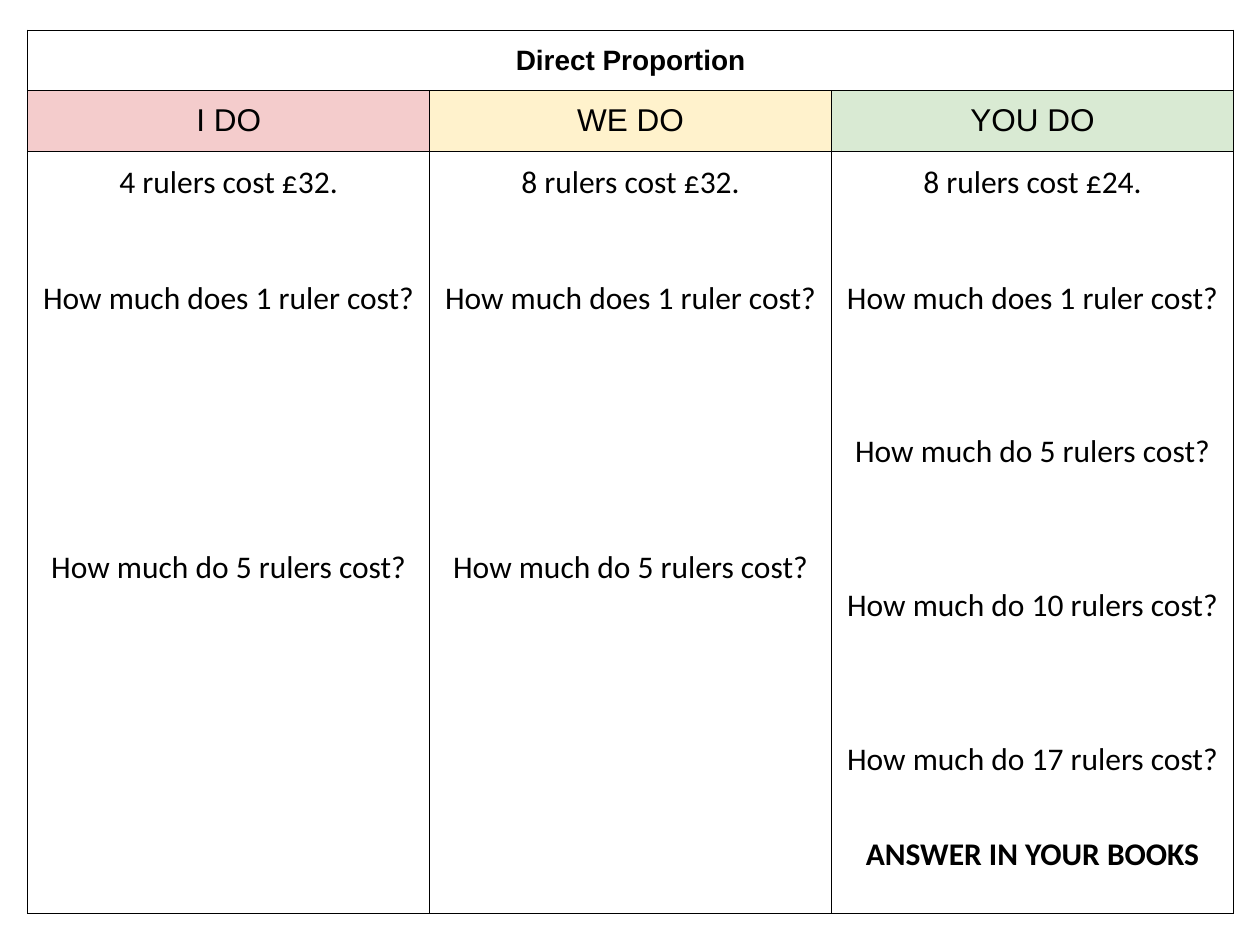
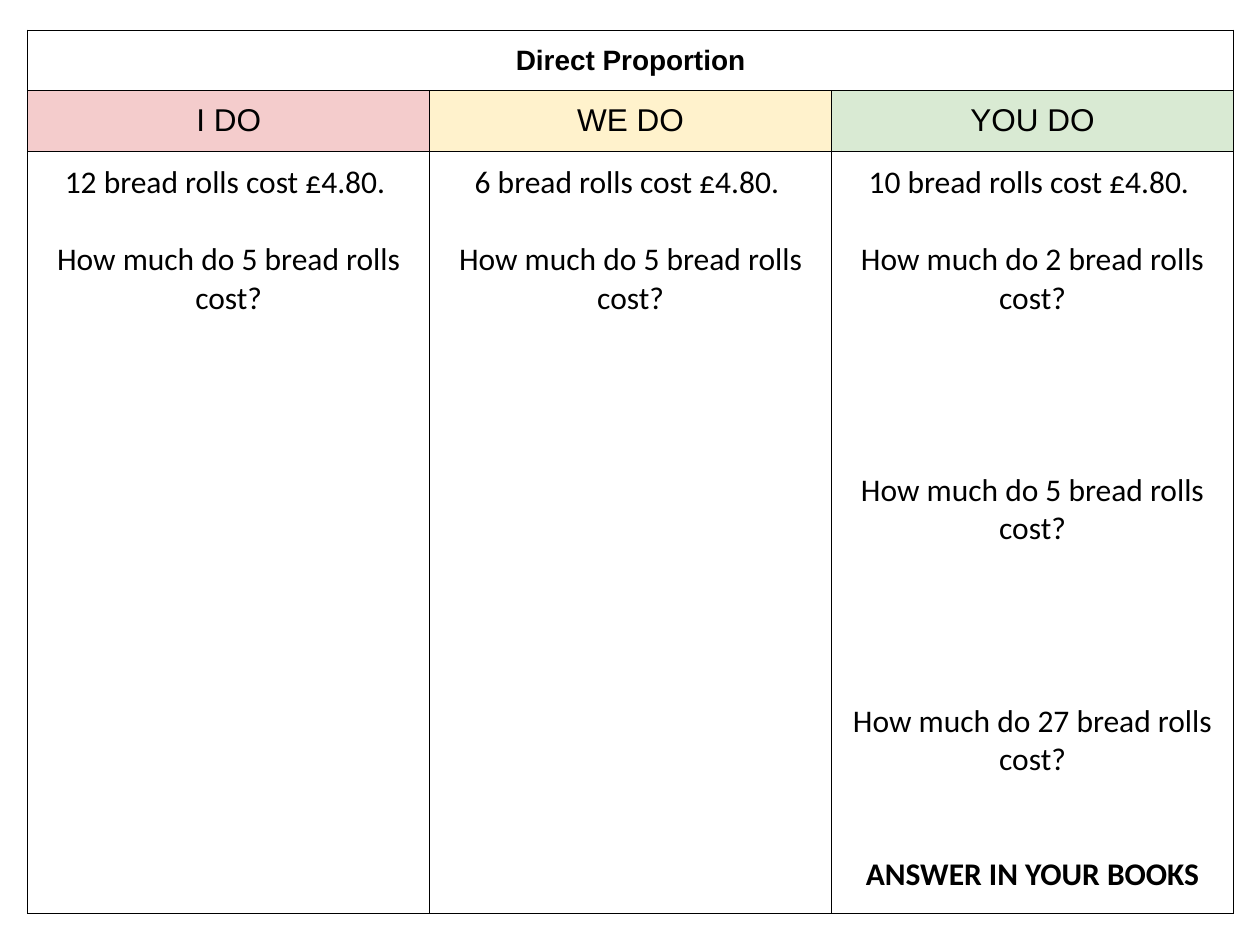
from lxml.etree import SubElement
from pptx import Presentation
from pptx.dml.color import RGBColor
from pptx.enum.text import MSO_ANCHOR as Anchor, PP_ALIGN as Align
from pptx.oxml.ns import qn
from pptx.util import Inches, Pt

BLACK = RGBColor(0x00, 0x00, 0x00)
PINK = RGBColor(0xF4, 0xCC, 0xCC)
CREAM = RGBColor(0xFF, 0xF2, 0xCC)
GREEN = RGBColor(0xD9, 0xEA, 0xD3)

LEFT, TOP, WIDTH = 0.22, 0.24, 9.57
HEADER_HEIGHT, BODY_HEIGHT = 0.48, 6.05
BODY_LINE = 21.97
TITLE = "Direct Proportion"
HEADINGS = [("I DO", PINK), ("WE DO", CREAM), ("YOU DO", GREEN)]
REMINDER = "ANSWER IN YOUR BOOKS"


class Worksheet:
    """Draws worksheet tables in a shared style on the current slide."""

    def __init__(self, deck):
        self.deck = deck
        self.page = None

    def add_page(self):
        self.page = self.deck.slides.add_slide(self.deck.slide_layouts[6])

    def add_table(self, left, top, width, heights):
        frame = self.page.shapes.add_table(len(heights), 1, Inches(left), Inches(top),
                                           Inches(width), Inches(sum(heights)))
        table = frame.table
        table.first_row = table.horz_banding = False
        for row, height in zip(table.rows, heights):
            row.height = Inches(height)
        return table

    def style_cell(self, cell, border, fill=None, anchor=Anchor.MIDDLE):
        properties = cell._tc.get_or_add_tcPr()
        for side in ("a:lnL", "a:lnR", "a:lnT", "a:lnB"):
            line = SubElement(properties, qn(side), w=str(Pt(border)))
            SubElement(SubElement(line, qn("a:solidFill")), qn("a:srgbClr"), val=str(BLACK))
        if fill is None:
            cell.fill.background()
        else:
            cell.fill.solid()
            cell.fill.fore_color.rgb = fill
        cell.vertical_anchor = anchor
        cell.margin_left = cell.margin_right = Inches(0.1)
        cell.margin_top = cell.margin_bottom = Inches(0.1)

    def set_text(self, para, text, font="Arial", size=18, bold=False):
        para.text = text
        para.alignment = Align.CENTER
        for span in para.runs:
            span.font.name = font
            span.font.size = Pt(size)
            span.font.bold = bold
            span.font.color.rgb = BLACK

    def add_title(self, text):
        cell = self.add_table(LEFT, TOP, WIDTH, [HEADER_HEIGHT]).cell(0, 0)
        self.style_cell(cell, 1)
        self.set_text(cell.text_frame.paragraphs[0], text, size=16, bold=True)

    def add_column(self, index, heading, colour, questions):
        width = WIDTH / len(HEADINGS)
        table = self.add_table(LEFT + index * width, TOP + HEADER_HEIGHT, width,
                               [HEADER_HEIGHT, BODY_HEIGHT])
        header, body = table.cell(0, 0), table.cell(1, 0)
        self.style_cell(header, 0.75, colour)
        self.set_text(header.text_frame.paragraphs[0], heading)
        self.style_cell(body, 0.75, anchor=Anchor.TOP)
        frame = body.text_frame
        for number, (gap_lines, text) in enumerate(questions):
            para = frame.add_paragraph() if number else frame.paragraphs[0]
            self.set_text(para, text, "Calibri", bold=text == REMINDER)
            if number:
                para.space_before = Pt(round(gap_lines * BODY_LINE, 1))


def ruler_example(price):
    return [(0, price), (2, "How much does 1 ruler cost?"), (6, "How much do 5 rulers cost?")]


def roll_question(gap_lines, count):
    return gap_lines, f"How much do {count} bread rolls cost?"


RULERS = [
    ruler_example("4 rulers cost £32."),
    ruler_example("8 rulers cost £32."),
    [(0, "8 rulers cost £24."), (2, "How much does 1 ruler cost?")]
    + [(3, f"How much do {count} rulers cost?") for count in (5, 10, 17)]
    + [(1.47, REMINDER)],
]
BREAD_ROLLS = [
    [(0, "12 bread rolls cost £4.80. "), roll_question(1, 5)],
    [(0, "6 bread rolls cost £4.80. "), roll_question(1, 5)],
    [(0, "10 bread rolls cost £4.80. "), roll_question(1, 2), roll_question(4, 5),
     roll_question(4, 27), (2, REMINDER)],
]


def main():
    deck = Presentation()
    deck.slide_width, deck.slide_height = Inches(10), Inches(7.5)
    sheet = Worksheet(deck)
    for columns in (RULERS, BREAD_ROLLS):
        sheet.add_page()
        for index, ((heading, colour), questions) in enumerate(zip(HEADINGS, columns)):
            sheet.add_column(index, heading, colour, questions)
        sheet.add_title(TITLE)
    deck.save("out.pptx")


if __name__ == "__main__":
    main()
